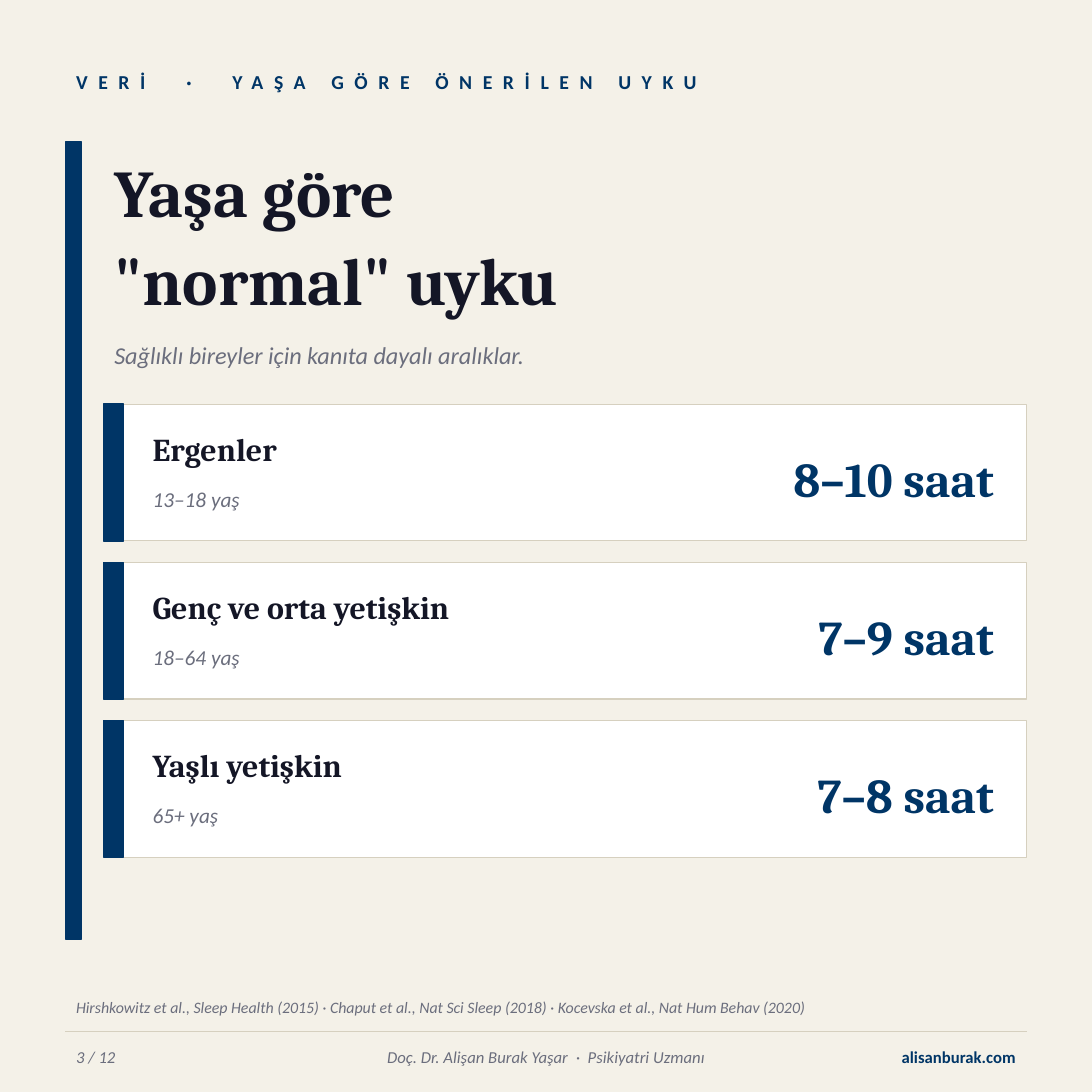
import pptx
import pptx.dml.color
import pptx.enum.shapes
import pptx.enum.text
import pptx.util
from lxml import etree

Cm = pptx.util.Cm
Pt = pptx.util.Pt
ALIGN = pptx.enum.text.PP_ALIGN
ANCHOR = pptx.enum.text.MSO_ANCHOR

COLORS = {
    "paper": "F4F1E8",
    "navy": "003566",
    "ink": "141626",
    "muted": "6B6E7D",
    "rule": "D6D0BF",
    "card": "FFFFFF",
}
SERIF = "Cambria"
SANS = "Calibri"


def rgb(name):
    return pptx.dml.color.RGBColor.from_string(COLORS[name])


class Deck:
    def __init__(self, size):
        self.prs = pptx.Presentation()
        self.prs.slide_width = self.prs.slide_height = Cm(size)

    def add_slide(self, background):
        self.slide = self.prs.slides.add_slide(self.prs.slide_layouts[6])
        fill = self.slide.background.fill
        fill.solid()
        fill.fore_color.rgb = rgb(background)

    def rect(self, x, y, w, h, fill, line, width):
        sp = self.slide.shapes.add_shape(
            pptx.enum.shapes.MSO_SHAPE.RECTANGLE, Cm(x), Cm(y), Cm(w), Cm(h))
        sp.shadow.inherit = False
        sp.fill.solid()
        sp.fill.fore_color.rgb = rgb(fill)
        sp.line.color.rgb = rgb(line)
        sp.line.width = Pt(width)

    def rule(self, x1, x2, y):
        line = self.slide.shapes.add_connector(
            pptx.enum.shapes.MSO_CONNECTOR.STRAIGHT, Cm(x1), Cm(y), Cm(x2), Cm(y))
        line.line.color.rgb = rgb("rule")
        line.line.width = Pt(0.75)
        sp_pr = line._element.spPr
        etree.SubElement(sp_pr, pptx.oxml.ns.qn("a:effectLst"))

    def text(self, x, y, w, h, text, size, color, font=SANS, bold=False,
             italic=False, align=ALIGN.LEFT, anchor=ANCHOR.MIDDLE):
        sp = self.slide.shapes.add_textbox(Cm(x), Cm(y), Cm(w), Cm(h))
        tf = sp.text_frame
        tf.word_wrap = True
        tf.vertical_anchor = anchor
        p = tf.paragraphs[0]
        p.alignment = align
        p.font.name = font
        p.font.size = Pt(size)
        p.font.bold = bold
        p.font.italic = italic
        p.font.color.rgb = rgb(color)
        p.add_run().text = text
        return p

    def dotted_text(self, x, y, w, h, left, right, tracking, gap, **style):
        p = self.text(x, y, w, h, left, **style)
        for text in (" ", "·", " ", right):
            p.add_run().text = text
        for r in p.runs:
            spacing = gap if r.text == " " else tracking
            r._r.get_or_add_rPr().set("spc", str(round(spacing * 100)))

    def card(self, y, group, ages, hours):
        self.rect(INDENT, y, RIGHT - INDENT, CARD_H, "card", "rule", 0.75)
        self.rect(INDENT, y, 0.46, CARD_H, "navy", "navy", 1)
        self.text(3.3, y + 0.46, 10.16, 1.27, group, 21, "ink", SERIF,
                  bold=True, anchor=ANCHOR.TOP)
        self.text(3.3, y + 1.78, 10.16, 1.14, ages, 14, "muted",
                  italic=True, anchor=ANCHOR.TOP)
        self.text(13.97, y + 0.64, 9.4, 2.16, hours, 32, "navy", SERIF,
                  bold=True, align=ALIGN.RIGHT)


LEFT, INDENT, RIGHT = 1.52, 2.41, 23.88
WIDTH = RIGHT - LEFT
CARD_TOP, CARD_H, CARD_STEP = 9.4, 3.18, 3.68
FOOTER_Y, FOOTER_H, FOOTER_W = 24.13, 0.89, 3.81

AGE_GROUPS = [
    ("Ergenler", "13–18 yaş", "8–10 saat"),
    ("Genç ve orta yetişkin", "18–64 yaş", "7–9 saat"),
    ("Yaşlı yetişkin", "65+ yaş", "7–8 saat"),
]


def main():
    deck = Deck(25.4)
    deck.add_slide("paper")

    deck.dotted_text(LEFT, 1.4, WIDTH, 1.02, "VERİ", "YAŞA GÖRE ÖNERİLEN UYKU",
                     7, 17, size=13, color="navy", bold=True)
    deck.rect(LEFT, 3.3, 0.38, 18.54, "navy", "navy", 1)
    for i, title in enumerate(["Yaşa göre", '"normal" uyku']):
        deck.text(INDENT, 3.3 + i * 2.03, 21.59, 2.29, title, 44, "ink", SERIF, bold=True)
    deck.text(INDENT, 7.75, 21.59, 1.02,
              "Sağlıklı bireyler için kanıta dayalı aralıklar.", 16, "muted", italic=True)

    for i, age_group in enumerate(AGE_GROUPS):
        deck.card(CARD_TOP + i * CARD_STEP, *age_group)

    deck.text(LEFT, 22.99, WIDTH, FOOTER_H,
              "Hirshkowitz et al., Sleep Health (2015) · Chaput et al., Nat Sci Sleep (2018)"
              " · Kocevska et al., Nat Hum Behav (2020)", 10.5, "muted", italic=True)
    deck.rule(LEFT, RIGHT, 24)
    deck.text(LEFT, FOOTER_Y, FOOTER_W, FOOTER_H, "3 / 12", 11, "muted", italic=True)
    deck.dotted_text(5.59, FOOTER_Y, 14.22, FOOTER_H, "Doç. Dr. Alişan Burak Yaşar",
                     "Psikiyatri Uzmanı", 0, 2.5, size=11, color="muted",
                     italic=True, align=ALIGN.CENTER)
    deck.text(RIGHT - FOOTER_W, FOOTER_Y, FOOTER_W, FOOTER_H, "alisanburak.com",
              11, "navy", bold=True, align=ALIGN.RIGHT)

    deck.prs.save("out.pptx")


if __name__ == "__main__":
    main()
